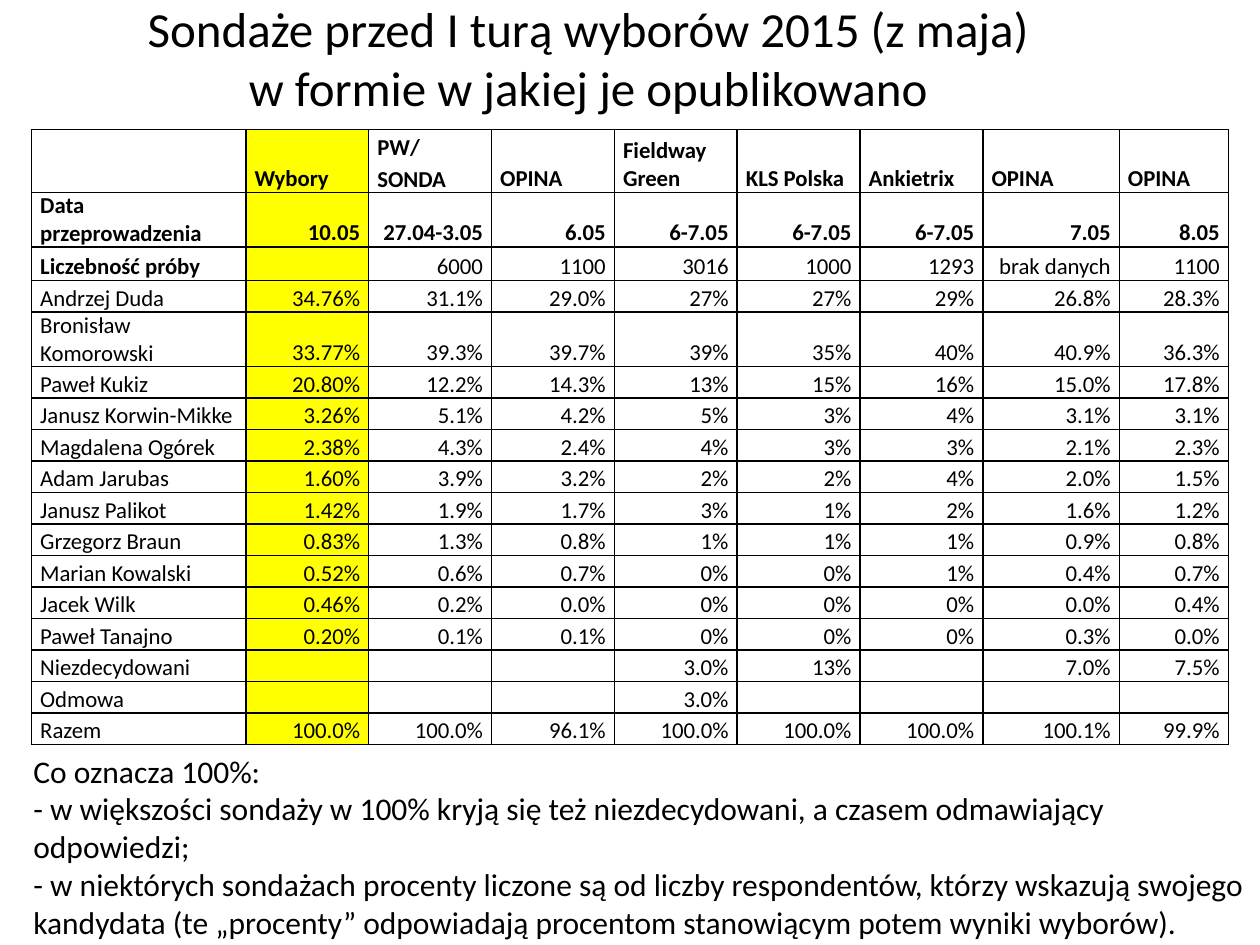
from lxml.etree import SubElement
from pptx import Presentation
from pptx.dml.color import RGBColor
from pptx.enum.text import MSO_ANCHOR as Anchor, PP_ALIGN as Align
from pptx.oxml.ns import qn
from pptx.util import Pt

FONT = "Calibri"
BLACK, YELLOW = "000000", "FFFF00"
SIZE = 13
TITLE = "Sondaże przed I turą wyborów 2015 (z maja)\vw formie w jakiej je opublikowano"
NOTES = [
    "Co oznacza 100%:",
    "- w większości sondaży w 100% kryją się też niezdecydowani, a czasem odmawiający odpowiedzi;",
    "- w niektórych sondażach procenty liczone są od liczby respondentów, którzy wskazują "
    "swojego kandydata (te „procenty” odpowiadają procentom stanowiącym potem wyniki wyborów).",
]
HEAD = ["", "Wybory", "PW/SONDA", "OPINA", "Fieldway Green", "KLS Polska",
        "Ankietrix", "OPINA", "OPINA"]
POLLS = [
    ["Data przeprowadzenia", "10.05", "27.04-3.05", "6.05", "6-7.05", "6-7.05", "6-7.05", "7.05", "8.05"],
    ["Liczebność próby", "", "6000", "1100", "3016", "1000", "1293", "brak danych", "1100"],
    ["Andrzej Duda", "34.76%", "31.1%", "29.0%", "27%", "27%", "29%", "26.8%", "28.3%"],
    ["Bronisław\nKomorowski", "33.77%", "39.3%", "39.7%", "39%", "35%", "40%", "40.9%", "36.3%"],
    ["Paweł Kukiz", "20.80%", "12.2%", "14.3%", "13%", "15%", "16%", "15.0%", "17.8%"],
    ["Janusz Korwin-Mikke", "3.26%", "5.1%", "4.2%", "5%", "3%", "4%", "3.1%", "3.1%"],
    ["Magdalena Ogórek", "2.38%", "4.3%", "2.4%", "4%", "3%", "3%", "2.1%", "2.3%"],
    ["Adam Jarubas", "1.60%", "3.9%", "3.2%", "2%", "2%", "4%", "2.0%", "1.5%"],
    ["Janusz Palikot", "1.42%", "1.9%", "1.7%", "3%", "1%", "2%", "1.6%", "1.2%"],
    ["Grzegorz Braun", "0.83%", "1.3%", "0.8%", "1%", "1%", "1%", "0.9%", "0.8%"],
    ["Marian Kowalski", "0.52%", "0.6%", "0.7%", "0%", "0%", "1%", "0.4%", "0.7%"],
    ["Jacek Wilk", "0.46%", "0.2%", "0.0%", "0%", "0%", "0%", "0.0%", "0.4%"],
    ["Paweł Tanajno", "0.20%", "0.1%", "0.1%", "0%", "0%", "0%", "0.3%", "0.0%"],
    ["Niezdecydowani", "", "", "", "3.0%", "13%", "", "7.0%", "7.5%"],
    ["Odmowa", "", "", "", "3.0%", "", "", "", ""],
    ["Razem", "100.0%", "100.0%", "96.1%", "100.0%", "100.0%", "100.0%", "100.1%", "99.9%"],
]
WIDTHS = [122.5] + [70.2] * 6 + [78, 62.3]
HEIGHTS = [31.5, 31, 19, 18, 31] + [18] * 12
TIGHT = {"Fieldway Green", "Data przeprowadzenia", "Bronisław\nKomorowski", "Janusz Korwin-Mikke"}


def color(code):
    return RGBColor.from_string(code)


def style(par, size, bold=False):
    for run in par.runs:
        font = run.font
        font.name, font.size, font.bold = FONT, Pt(size), bold
        font.color.rgb = color(BLACK)


def add_text(slide, box, lines, size, align=Align.LEFT, anchor=Anchor.TOP):
    frame = slide.shapes.add_textbox(*map(Pt, box)).text_frame
    frame.word_wrap = True
    frame.vertical_anchor = anchor
    frame.text = "\n".join(lines)
    for par in frame.paragraphs:
        par.alignment = align
        style(par, size)


def add_borders(cell):
    """Draw a thin black line on all four sides, ahead of the cell's fill."""
    props = cell._tc.get_or_add_tcPr()
    for spot, side in enumerate(("lnL", "lnR", "lnT", "lnB")):
        line = SubElement(props, qn(f"a:{side}"), w=str(Pt(1)))
        fill = SubElement(line, qn("a:solidFill"))
        SubElement(fill, qn("a:srgbClr"), val=BLACK)
        props.insert(spot, line)


def fill_cell(cell, text, row, col):
    cell.text = text
    cell.vertical_anchor = Anchor.BOTTOM
    cell.margin_left = cell.margin_right = Pt(5)
    cell.margin_top = cell.margin_bottom = 0
    if col == 1:
        cell.fill.solid()
        cell.fill.fore_color.rgb = color(YELLOW)
    else:
        cell.fill.background()
    add_borders(cell)
    bold = row < 2 or (row == 2 and col == 0)
    for par in cell.text_frame.paragraphs:
        par.alignment = Align.RIGHT if row and col else Align.LEFT
        par.line_spacing = 1.0 if text in TIGHT else 1.15
        style(par, SIZE, bold)
        if not text:  # keeps empty cells from stretching their row
            SubElement(par._p, qn("a:endParaRPr"), sz=str(SIZE * 100))


def add_grid(slide, left, top, rows):
    size = (sum(WIDTHS), sum(HEIGHTS))
    table = slide.shapes.add_table(len(rows), len(WIDTHS), *map(Pt, (left, top, *size))).table
    table.first_row = table.horz_banding = False
    for col, width in zip(table.columns, WIDTHS):
        col.width = Pt(width)
    for line, height in zip(table.rows, HEIGHTS):
        line.height = Pt(height)
    for row, texts in enumerate(rows):
        for col, text in enumerate(texts):
            fill_cell(table.cell(row, col), text, row, col)


def main():
    deck = Presentation()
    deck.slide_width, deck.slide_height = Pt(720), Pt(540)
    slide = deck.slides.add_slide(deck.slide_layouts[6])
    add_text(slide, (36, 6, 600, 54), [TITLE], 28, Align.CENTER, Anchor.MIDDLE)
    add_text(slide, (12, 426, 708, 116.5), NOTES, 18)
    add_grid(slide, 18, 74, [HEAD] + POLLS)
    deck.save("out.pptx")


if __name__ == "__main__":
    main()
